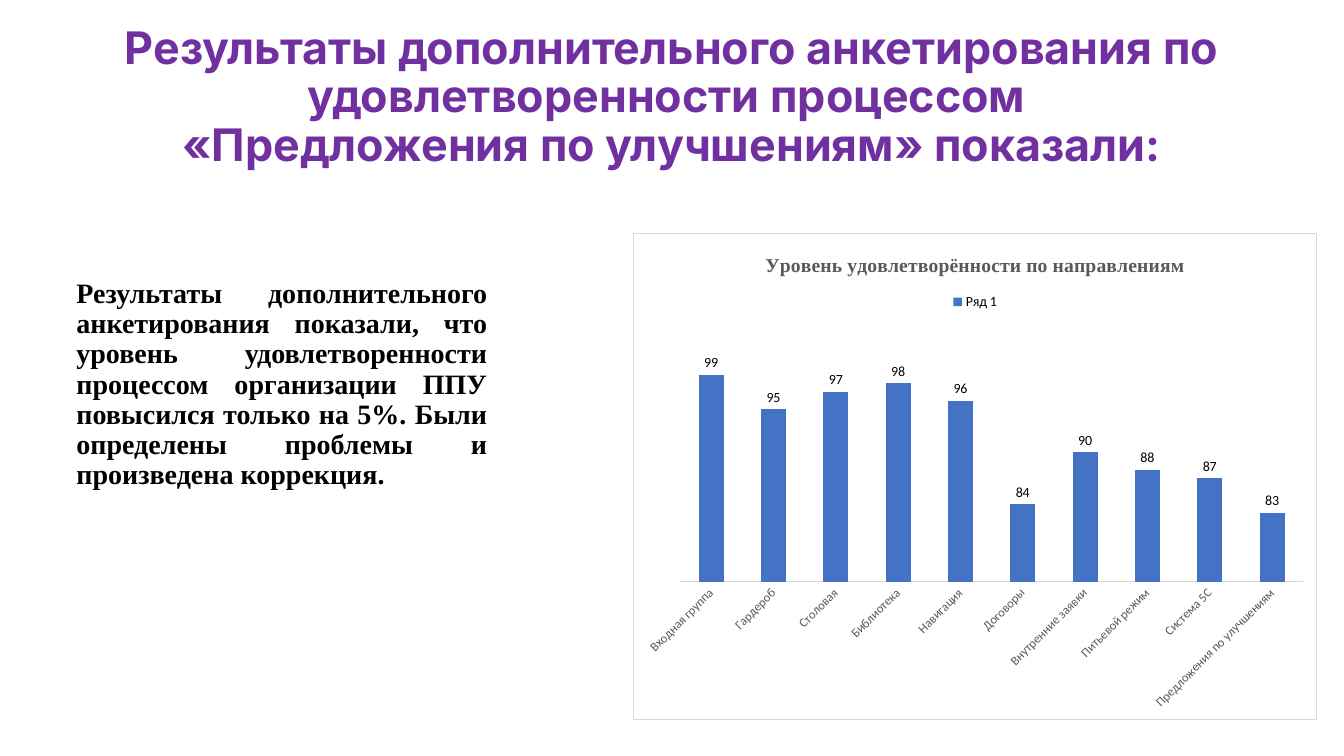
"""Builds a slide on survey results: a title, a summary and a column chart."""
import copy
import lxml.etree
import pptx
import pptx.chart.data
import pptx.dml.color
import pptx.enum.chart
import pptx.enum.text
import pptx.oxml
import pptx.oxml.ns
import pptx.util

HUES = {"title": "7030A0", "text": "000000", "label": "595959",
        "bar": "4472C4", "rule": "D9D9D9", "back": "FFFFFF"}
WIDE, HIGH = pptx.util.Inches(40 / 3), pptx.util.Inches(7.5)
SHARES = {"title": (6.88, 3.33, 86.25, 19.33),
          "note": (4.95, 36.27, 32.05, 41.6),
          "chart": (47.1, 30.87, 50.93, 64.43)}
SPOTS = {name: [int(side * share / 100)
                for side, share in zip((WIDE, HIGH) * 2, shares)]
         for name, shares in SHARES.items()}
SERIF = "Times New Roman"
ALIGN = pptx.enum.text.PP_ALIGN
qn = pptx.oxml.ns.qn


def hue(name):
    return pptx.dml.color.RGBColor.from_string(HUES[name])


def write(frame, text, size, face, tint, align=ALIGN.CENTER, space=None):
    frame.text = text
    para = frame.paragraphs[0]
    para.alignment = align
    if space:
        para.line_spacing = space
    for run in para.runs:
        font = run.font
        font.size, font.name, font.bold = pptx.util.Pt(size), face, True
        font.color.rgb = hue(tint)
    for gap in para._p.findall(qn("a:br")):
        gap.append(copy.deepcopy(para.runs[0]._r.rPr))


deck = pptx.Presentation()
deck.slide_width, deck.slide_height = WIDE, HIGH
slide = deck.slides.add_slide(deck.slide_layouts[5])

title = slide.shapes.title
title.left, title.top, title.width, title.height = SPOTS["title"]
head = title.text_frame
write(head, "Результаты дополнительного анкетирования по удовлетворенности "
      "процессом \v«Предложения по улучшениям» показали:",
      32, "Inter", "title", space=0.9)
head.word_wrap = True
head.auto_size = pptx.enum.text.MSO_AUTO_SIZE.NONE
head.vertical_anchor = pptx.enum.text.MSO_ANCHOR.MIDDLE

note = slide.shapes.add_textbox(*SPOTS["note"])
note.text_frame.word_wrap = True
write(note.text_frame, "Результаты дополнительного анкетирования показали, что "
      "уровень удовлетворенности процессом организации ППУ повысился только "
      "на 5%. Были определены проблемы и произведена коррекция.",
      20, SERIF, "text", ALIGN.JUSTIFY, 0.9)

scores = {"Входная группа": 99, "Гардероб": 95, "Столовая": 97,
          "Библиотека": 98, "Навигация": 96, "Договоры": 84,
          "Внутренние заявки": 90, "Питьевой режим": 88,
          "Система 5С": 87, "Предложения по улучшениям": 83}
data = pptx.chart.data.CategoryChartData()
data.categories = list(scores)
data.add_series("Ряд 1", list(scores.values()))
chart = slide.shapes.add_chart(
    pptx.enum.chart.XL_CHART_TYPE.COLUMN_CLUSTERED, *SPOTS["chart"], data).chart
chart.font.name, chart.font.size = "Calibri", pptx.util.Pt(10)
chart.font.color.rgb = hue("text")
chart.has_title = True
write(chart.chart_title.text_frame, "Уровень удовлетворённости по направлениям",
      14, SERIF, "label")
chart.chart_title.include_in_layout = False
chart.has_legend = True
chart.legend.position = pptx.enum.chart.XL_LEGEND_POSITION.TOP
chart.legend.include_in_layout = False

plot = chart.plots[0]
plot.gap_width, plot.overlap = 150, -25
plot.vary_by_categories = False
bars = plot.series[0]
bars.format.fill.solid()
bars.format.fill.fore_color.rgb = hue("bar")
marks = bars.data_labels
marks.show_value = True
marks.position = pptx.enum.chart.XL_LABEL_POSITION.OUTSIDE_END
marks.font.name, marks.font.size = "Calibri", pptx.util.Pt(10)
marks.font.color.rgb = hue("text")

scale = chart.value_axis
scale.minimum_scale, scale.maximum_scale = 75, 105
scale.has_major_gridlines = False
scale.visible = False
base = chart.category_axis
base.major_tick_mark = pptx.enum.chart.XL_TICK_MARK.NONE
base.format.line.color.rgb = hue("rule")
base.format.line.width = pptx.util.Pt(0.75)
names = base.tick_labels.font
names.name, names.size = "Calibri", pptx.util.Pt(9)
names.color.rgb = hue("label")
base._element.find(qn("c:txPr")).find(qn("a:bodyPr")).set("rot", "-2700000")

area = chart._chartSpace.chart.plotArea
layout = lxml.etree.Element(qn("c:layout"))
manual = lxml.etree.SubElement(layout, qn("c:manualLayout"))
for tag, val in (("layoutTarget", "inner"), ("xMode", "edge"), ("yMode", "edge"),
                 ("x", 6.8 / 100), ("y", 18.3 / 100),
                 ("w", 91.2 / 100), ("h", 53.3 / 100)):
    lxml.etree.SubElement(manual, qn("c:" + tag)).set("val", str(val))
area.insert(0, layout)

frame = pptx.oxml.parse_xml(
    f'<c:spPr {pptx.oxml.ns.nsdecls("c", "a")}>'
    f'<a:solidFill><a:srgbClr val="{HUES["back"]}"/></a:solidFill>'
    f'<a:ln w="9525"><a:solidFill><a:srgbClr val="{HUES["rule"]}"/>'
    '</a:solidFill></a:ln></c:spPr>')
chart._chartSpace.chart.addnext(frame)

deck.save("out.pptx")
